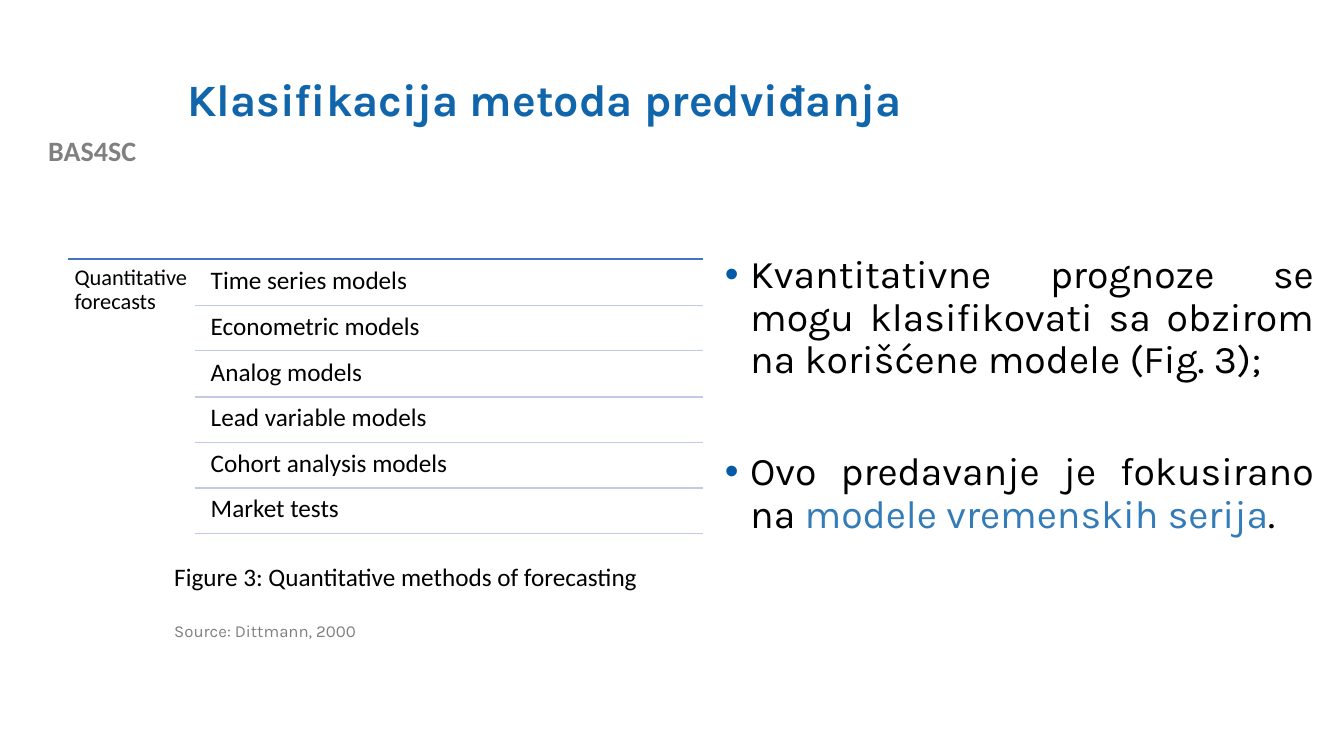
from lxml.etree import SubElement
from pptx import Presentation
from pptx.dml.color import RGBColor
from pptx.enum.shapes import MSO_CONNECTOR
from pptx.enum.text import MSO_ANCHOR, MSO_AUTO_SIZE, PP_ALIGN
from pptx.oxml.ns import qn
from pptx.util import Pt

EMU_PER_PX = 9144
BLACK = "000000"


def px(length):
    """Turn whole px, a hundred to the inch, into EMU."""
    return length * EMU_PER_PX


def colour(value):
    """Turn a hex string into a colour."""
    return RGBColor.from_string(value)


class ForecastSlide:
    """Holds the style and the current slide, and draws its elements."""

    heading_font = "Karla"
    label_font = "Calibri"
    bullet_colour = "015BA6"
    bullet_indent = 25

    def __init__(self, deck):
        """Add a page with a title and a body."""
        self.page = deck.slides.add_slide(deck.slide_layouts[1])

    def place(self, shape, left, top, width, height):
        """Move and size a shape."""
        shape.left, shape.top = px(left), px(top)
        shape.width, shape.height = px(width), px(height)

    def prepare(self, frame, anchor=MSO_ANCHOR.TOP):
        """Make a text frame wrap at a fixed size."""
        frame.word_wrap = True
        frame.auto_size = MSO_AUTO_SIZE.NONE
        frame.vertical_anchor = anchor

    def add_span(self, para, text, size, font, ink, bold=False):
        """Add one run to a paragraph."""
        span = para.add_run()
        span.text = text
        span.font.size = Pt(size)
        span.font.name = font
        span.font.bold = bold
        span.font.color.rgb = colour(ink)

    def title(self, text, area):
        """Fill the title placeholder."""
        box = self.page.shapes.title
        self.place(box, *area)
        self.prepare(box.text_frame, MSO_ANCHOR.MIDDLE)
        para = box.text_frame.paragraphs[0]
        para.alignment = PP_ALIGN.LEFT
        para.line_spacing = 0.9
        self.add_span(para, text, 32, self.heading_font, "1065AB", True)

    def bullet(self, para):
        """Give a paragraph a hanging coloured bullet."""
        properties = para._p.get_or_add_pPr()
        properties.set("marL", str(px(self.bullet_indent)))
        properties.set("indent", str(-px(self.bullet_indent)))
        bullet_fill = SubElement(properties, qn("a:buClr"))
        SubElement(bullet_fill, qn("a:srgbClr"), val=self.bullet_colour)
        SubElement(properties, qn("a:buFont"), typeface="Arial")
        SubElement(properties, qn("a:buChar"), char="•")

    def bullets(self, items, area, gap):
        """Fill the body placeholder with justified bullets."""
        box = self.page.placeholders[1]
        self.place(box, *area)
        frame = box.text_frame
        self.prepare(frame)
        for index, spans in enumerate(items):
            para = frame.add_paragraph() if index else frame.paragraphs[0]
            self.bullet(para)
            para.alignment = PP_ALIGN.JUSTIFY
            para.line_spacing = 0.9
            para.space_before = Pt(gap if index else 0)
            for text, ink in spans:
                self.add_span(para, text, 28, self.heading_font, ink)

    def label(self, text, area, size, ink=BLACK, font=label_font, bold=False,
              align=PP_ALIGN.LEFT, spacing=0.9, inset=None):
        """Add a text box with one paragraph."""
        box = self.page.shapes.add_textbox(*map(px, area))
        frame = box.text_frame
        self.prepare(frame)
        if inset is not None:
            frame.margin_left = frame.margin_right = px(inset)
            frame.margin_top = frame.margin_bottom = px(inset)
        para = frame.paragraphs[0]
        para.alignment = align
        para.line_spacing = spacing
        self.add_span(para, text, size, font, ink, bold)

    def rule(self, left, right, top, ink):
        """Add a horizontal line."""
        line = self.page.shapes.add_connector(
            MSO_CONNECTOR.STRAIGHT, px(left), px(top), px(right), px(top))
        line.line.color.rgb = colour(ink)
        line.line.width = Pt(1)
        SubElement(line._element.spPr, qn("a:effectLst"))

    def method_list(self, heading, methods, left, right, top):
        """Add a heading beside ruled rows."""
        column, pitch, inset = left + 126, 45.3, 7
        self.rule(left, right, top, "4472C4")
        self.label(heading, (left, top, 126, 274), 16, inset=inset)
        for index, method in enumerate(methods):
            bottom = top + 46 + round(index * pitch)
            area = (column + 9, bottom - 44, right - column - 9, 43)
            self.label(method, area, 18, inset=inset)
            self.rule(column, right, bottom, "C1C9E4")


def main():
    """Build and save the slide."""
    deck = Presentation()
    deck.slide_width, deck.slide_height = px(1333), px(750)
    slide = ForecastSlide(deck)
    slide.label("BAS4SC", (0, 128, 183, 44), 20, "808080", bold=True,
                align=PP_ALIGN.CENTER, spacing=1.0)
    slide.title("Klasifikacija metoda predviđanja", (176, 40, 1066, 122))
    slide.bullets([
        [("Kvantitativne prognoze se mogu klasifikovati sa obzirom "
          "na korišćene modele (Fig. 3);", BLACK)],
        [("Ovo predavanje je fokusirano na ", BLACK),
         ("modele vremenskih serija", "347CB8"), (".", BLACK)],
    ], (709, 248, 604, 365), 50)
    slide.label("Source: Dittmann, 2000", (163, 613, 667, 28), 12, "7F7F7F",
                font=slide.heading_font)
    slide.label("Figure 3: Quantitative methods of forecasting",
                (163, 552, 496, 40), 18, spacing=1.0)
    slide.method_list("Quantitative forecasts", [
        "Time series models", "Econometric models", "Analog models",
        "Lead variable models", "Cohort analysis models", "Market tests",
    ], 67, 697, 257)
    deck.save("out.pptx")


if __name__ == "__main__":
    main()
